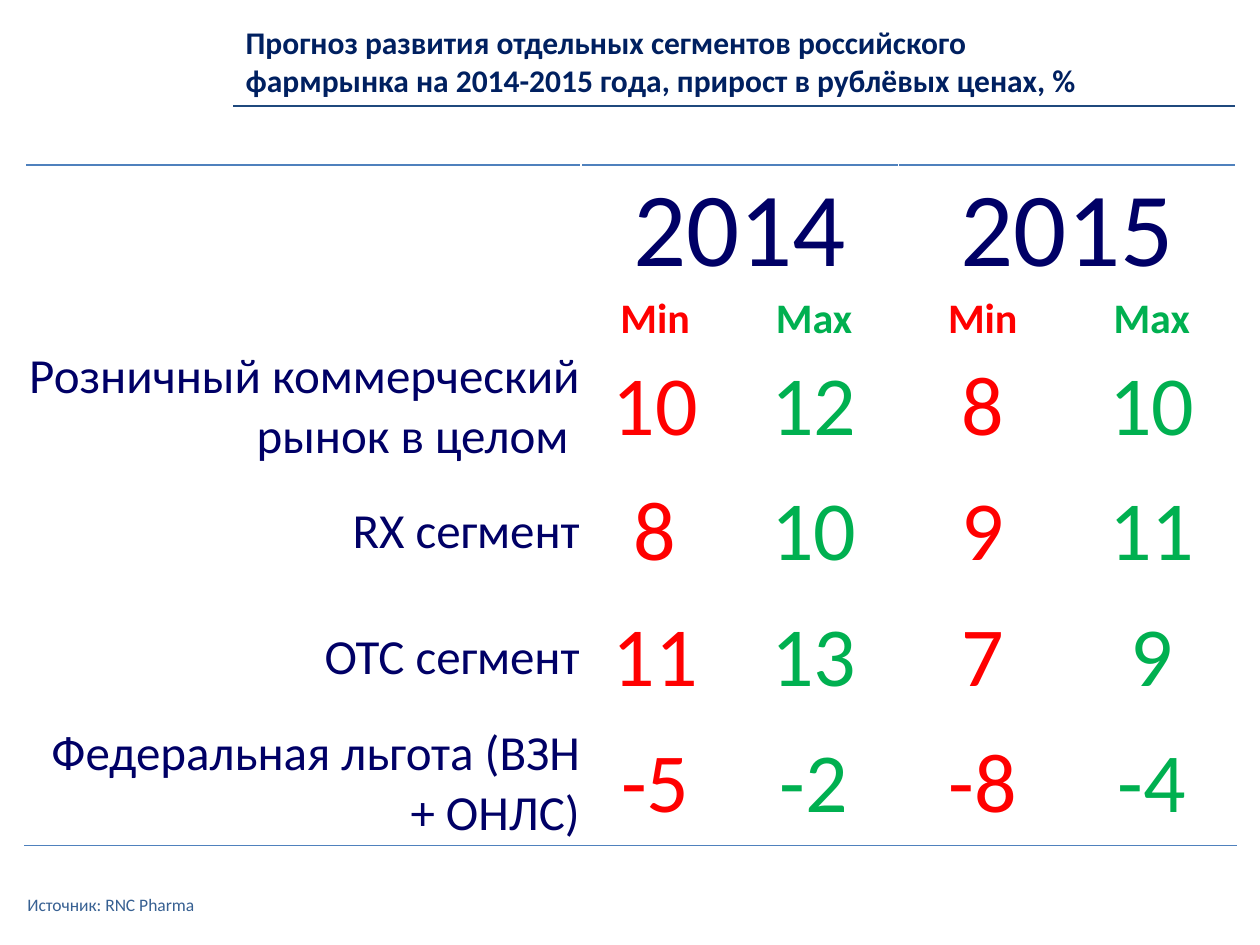
from lxml.etree import SubElement
from pptx import Presentation
from pptx.dml.color import RGBColor as Rgb
from pptx.enum.shapes import MSO_CONNECTOR as Conn
from pptx.enum.text import MSO_ANCHOR as Anchor, MSO_AUTO_SIZE as Fit, PP_ALIGN as Align
from pptx.oxml import parse_xml
from pptx.oxml.ns import nsdecls, qn
from pptx.util import Pt

COLORS = {"rule": "1F497D", "title": "002060", "source": "376092",
          "label": "000066", "min": "FF0000", "max": "00B050", "edge": "4F81BD"}
YEARS = ["2014", "2015"]
BOUNDS = ["min", "max"] * len(YEARS)
SEGMENTS = [
    ("Розничный коммерческий рынок в целом ", [10, 12, 8, 10]),
    ("RX сегмент", [8, 10, 9, 11]),
    ("OTC сегмент", [11, 13, 7, 9]),
    ("Федеральная льгота (ВЗН + ОНЛС)", [-5, -2, -8, -4]),
]
WIDTHS = [317.5, 85, 96.5, 96.5, 96.5]
HEIGHTS = [46, 24, 71.3, 71.3, 72.7, 71.3]


class Deck:
    font = "Calibri"

    def __init__(self, prs):
        self.slide = prs.slides.add_slide(prs.slide_layouts[5])

    def label(self, frame, text, size, color, bold=False, align=Align.LEFT):
        par = frame.paragraphs[0]
        par.text = text
        par.alignment = align
        font = par.font
        font.name, font.size, font.bold = self.font, Pt(size), bold
        font.color.rgb = Rgb.from_string(COLORS[color])

    def title(self, text, box):
        shape = self.slide.shapes.title
        shape.left, shape.top, shape.width, shape.height = map(Pt, box)
        frame = shape.text_frame
        frame.word_wrap = True
        frame.auto_size = Fit.SHAPE_TO_FIT_TEXT
        frame.vertical_anchor = Anchor.TOP
        self.label(frame, text, 18, "title", True)

    def note(self, text, box):
        frame = self.slide.shapes.add_textbox(*map(Pt, box)).text_frame
        frame.word_wrap = True
        frame.vertical_anchor = Anchor.MIDDLE
        self.label(frame, text, 10, "source")

    def rule(self, left, right, y):
        line = self.slide.shapes.add_connector(
            Conn.STRAIGHT, Pt(left), Pt(y), Pt(right), Pt(y))
        line.line.color.rgb = Rgb.from_string(COLORS["rule"])
        line.line.width = Pt(1.5)
        SubElement(line._element.spPr, qn("a:effectLst"))

    def table(self, left, top):
        grid = self.slide.shapes.add_table(
            len(HEIGHTS), len(WIDTHS), Pt(left), Pt(top),
            Pt(sum(WIDTHS)), Pt(sum(HEIGHTS))).table
        grid.first_row = grid.horz_banding = False
        for col, width in zip(grid.columns, WIDTHS):
            col.width = Pt(width)
        for row, height in zip(grid.rows, HEIGHTS):
            row.height = Pt(height)
        for cell in grid.iter_cells():
            cell.fill.background()
        return grid

    def cell(self, cell, text, size, color, bold=False, align=Align.CENTER):
        cell.margin_left = cell.margin_right = cell.margin_top = Pt(0.7)
        cell.margin_bottom = 0
        cell.vertical_anchor = Anchor.MIDDLE
        self.label(cell.text_frame, text, size, color, bold, align)

    def edge(self, cell, side):
        """Draw a thin border on one side of a cell: T or B."""
        line = parse_xml(
            f'<a:ln{side} {nsdecls("a")} w="{Pt(1)}"><a:solidFill>'
            f'<a:srgbClr val="{COLORS["edge"]}"/></a:solidFill></a:ln{side}>')
        cell._tc.get_or_add_tcPr().insert(0, line)


def main():
    prs = Presentation()
    prs.slide_width, prs.slide_height = Pt(720), Pt(540)
    deck = Deck(prs)
    deck.rule(133.2, 705.6, 60.5)
    deck.note("Источник: RNC Pharma", (8.6, 502.6, 228.2, 28.8))
    deck.title("Прогноз развития отдельных сегментов российского фармрынка "
               "на 2014-2015 года, прирост в рублёвых ценах, %",
               (133.2, 9.4, 516.2, 51.1))

    grid = deck.table(14.4, 94.3)
    grid.cell(0, 0).merge(grid.cell(1, 0))
    for i, year in enumerate(YEARS):
        head = grid.cell(0, 1 + 2 * i)
        head.merge(grid.cell(0, 2 + 2 * i))
        deck.cell(head, year, 60, "label")
    for c, bound in enumerate(BOUNDS, 1):
        deck.cell(grid.cell(1, c), bound.title(), 24, bound, True)
    for r, (name, values) in enumerate(SEGMENTS, 2):
        deck.cell(grid.cell(r, 0), name, 28, "label", align=Align.RIGHT)
        for c, (value, bound) in enumerate(zip(values, BOUNDS), 1):
            deck.cell(grid.cell(r, c), str(value), 48, bound)
    for c in range(len(WIDTHS)):
        deck.edge(grid.cell(0, c), "T")
        deck.edge(grid.cell(len(HEIGHTS) - 1, c), "B")
    prs.save("out.pptx")


if __name__ == "__main__":
    main()
